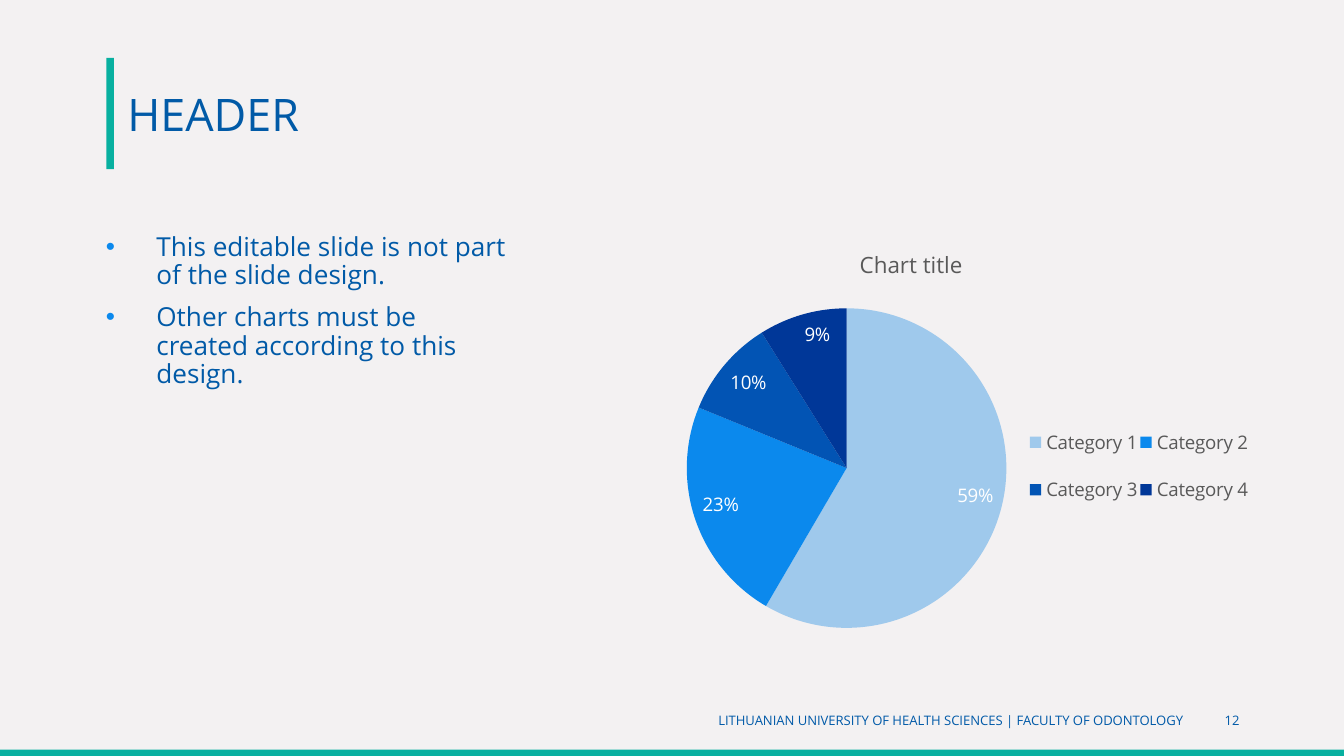
from lxml.etree import SubElement
from pptx import Presentation
from pptx.chart.data import CategoryChartData
from pptx.dml.color import RGBColor
from pptx.enum.chart import XL_CHART_TYPE, XL_LABEL_POSITION, XL_LEGEND_POSITION
from pptx.enum.shapes import MSO_SHAPE
from pptx.enum.text import MSO_ANCHOR, PP_ALIGN
from pptx.oxml import parse_xml
from pptx.oxml.ns import nsdecls, qn
from pptx.util import Pt

FACE = "Open Sans"
WIDE, HIGH = 720, 405
HEX = {"paper": "F3F1F2", "teal": "08B0A0", "blue": "015AA7", "foot": "015AA8",
       "dot": "0B89ED", "gray": "595959", "white": "FFFFFF"}
BARS = [
    ("paper", (0, 0, WIDE, HIGH)),
    ("teal", (0, 401.6, WIDE, 3.4)),
    ("teal", (57, 31, 4, 59.6)),
]
TEXTS = [
    (["HEADER"], (61.2, 31, 609, 59.6), {"size": 24, "color": "blue"}),
    (["This editable slide is not part of the slide design.",
      "Other charts must be created according to this design."],
     (49.7, 121.7, 232.6, 224.6),
     {"size": 14, "color": "blue", "anchor": MSO_ANCHOR.TOP, "bullet": True}),
    (["LITHUANIAN UNIVERSITY OF HEALTH SCIENCES | FACULTY OF ODONTOLOGY"],
     (121, 375.3, 519.8, 21.6), {"size": 7, "color": "foot", "align": PP_ALIGN.RIGHT}),
    (["12"], (645.1, 375.3, 26, 21.6),
     {"size": 7, "color": "foot", "align": PP_ALIGN.RIGHT}),
]
PIE = {
    "box": (306, 121.7, 364.3, 224.6),
    "title": "Chart title",
    "series": "Series 1",
    "slices": [("Category 1", 59, "9FC9EC"), ("Category 2", 23, "0B89ED"),
               ("Category 3", 10, "0254B4"), ("Category 4", 9, "003798")],
    "plot": {"x": 0.17, "y": 0.19, "w": 0.47, "h": 0.77},
    "legend": {"x": 0.67, "y": 0.43, "w": 0.33, "h": 0.28},
}


def style(font, size, color):
    looks = {"name": FACE, "size": Pt(size), "bold": False}
    for key, value in looks.items():
        setattr(font, key, value)
    font.color.rgb = RGBColor.from_string(HEX[color])


def add_bar(slide, color, box):
    bar = slide.shapes.add_shape(MSO_SHAPE.RECTANGLE, *map(Pt, box))
    bar.shadow.inherit = False
    bar.fill.solid()
    bar.fill.fore_color.rgb = RGBColor.from_string(HEX[color])
    bar.line.fill.background()


def add_dot(para):
    props = para._p.get_or_add_pPr()
    props.set("marL", str(Pt(27)))
    props.set("indent", str(-Pt(27)))
    tint = SubElement(props, qn("a:buClr"))
    SubElement(tint, qn("a:srgbClr"), val=HEX["dot"])
    SubElement(props, qn("a:buFont"), typeface="Arial")
    SubElement(props, qn("a:buChar"), char="•")


def add_text(slide, lines, box, look):
    frame = slide.shapes.add_textbox(*map(Pt, box)).text_frame
    frame.word_wrap = True
    frame.vertical_anchor = look.get("anchor", MSO_ANCHOR.MIDDLE)
    for num, line in enumerate(lines):
        para = frame.add_paragraph() if num else frame.paragraphs[0]
        para.alignment = look.get("align", PP_ALIGN.LEFT)
        if look.get("bullet"):
            para.line_spacing = 0.9
            if num:
                para.space_before = Pt(7.5)
            add_dot(para)
        run = para.add_run()
        run.text = line
        style(run.font, look["size"], look["color"])


def layout(parts, inner=False):
    target = '<c:layoutTarget val="inner"/>' if inner else ""
    modes = '<c:xMode val="edge"/><c:yMode val="edge"/>'
    sizes = "".join(f'<c:{key} val="{val}"/>' for key, val in parts.items())
    return parse_xml(f'<c:layout {nsdecls("c")}><c:manualLayout>{target}{modes}{sizes}'
                     '</c:manualLayout></c:layout>')


def add_pie(slide):
    names, values, tints = zip(*PIE["slices"])
    data = CategoryChartData()
    data.categories = names
    data.add_series(PIE["series"], values)
    chart = slide.shapes.add_chart(XL_CHART_TYPE.PIE, *map(Pt, PIE["box"]), data).chart
    style(chart.font, 10, "gray")
    chart.has_title = True
    title = chart.chart_title.text_frame
    title.text = PIE["title"]
    style(title.paragraphs[0].runs[0].font, 12, "gray")

    plot = chart.plots[0]
    plot.vary_by_categories = True
    for num, tint in enumerate(tints):
        fill = plot.series[0].points[num].format.fill
        fill.solid()
        fill.fore_color.rgb = RGBColor.from_string(tint)
    plot.has_data_labels = True
    looks = {"show_value": True, "show_percentage": False, "number_format": '0"%"',
             "number_format_is_linked": False, "position": XL_LABEL_POSITION.INSIDE_END}
    for key, value in looks.items():
        setattr(plot.data_labels, key, value)
    style(plot.data_labels.font, 10, "white")

    chart.has_legend = True
    legend = chart.legend
    legend.position = XL_LEGEND_POSITION.RIGHT
    legend.include_in_layout = False
    style(legend.font, 10, "gray")
    area = chart._chartSpace.chart.plotArea
    for old in area.findall(qn("c:layout")):
        area.remove(old)
    area.insert(0, layout(PIE["plot"], True))
    key = legend._element
    for old in key.findall(qn("c:layout")):
        key.remove(old)
    key.find(qn("c:legendPos")).addnext(layout(PIE["legend"]))


def main():
    deck = Presentation()
    deck.slide_width, deck.slide_height = Pt(WIDE), Pt(HIGH)
    slide = deck.slides.add_slide(deck.slide_layouts[6])
    for color, box in BARS:
        add_bar(slide, color, box)
    for lines, box, look in TEXTS:
        add_text(slide, lines, box, look)
    add_pie(slide)
    deck.save("out.pptx")


if __name__ == "__main__":
    main()
